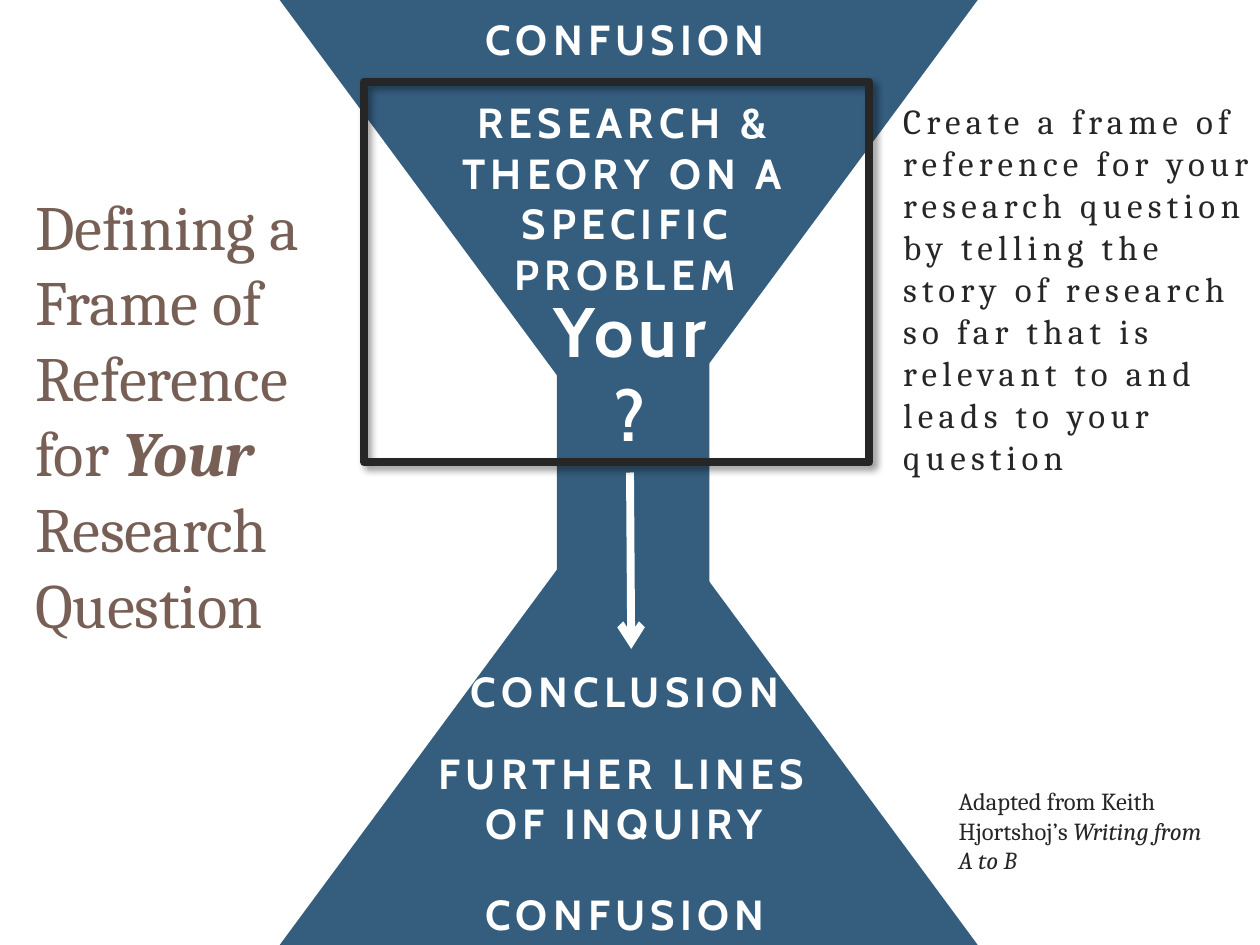
from lxml import etree
from pptx import Presentation
from pptx.dml.color import RGBColor
from pptx.enum.shapes import MSO_CONNECTOR, MSO_SHAPE
from pptx.enum.text import MSO_ANCHOR, PP_ALIGN
from pptx.oxml import parse_xml
from pptx.oxml.ns import qn
from pptx.util import Inches, Pt

BLUE, WHITE, DARK, BROWN = "355D7E", "FFFFFF", "262626", "775F55"
SHADOW = """<a:effectLst xmlns:a="http://schemas.openxmlformats.org/drawingml/2006/main">
  <a:outerShdw blurRad="50800" dist="38100" dir="2700000" algn="tl" rotWithShape="0">
    <a:srgbClr val="000000"><a:alpha val="40000"/></a:srgbClr>
  </a:outerShdw>
</a:effectLst>"""


def add_text(left, top, width, height, text):
    box = slide.shapes.add_textbox(Inches(left), Inches(top), Inches(width), Inches(height))
    box.text_frame.word_wrap = True
    box.text_frame.text = text
    return box.text_frame


def style_text(frame, size, font, color, bold=None, spacing=0, align=PP_ALIGN.LEFT):
    """Format every run; spacing is the letter spacing in points."""
    for paragraph in frame.paragraphs:
        paragraph.alignment = align
        for run in paragraph.runs:
            run.font.size = Pt(size)
            run.font.name = font
            run.font.color.rgb = RGBColor.from_string(color)
            if bold:
                run.font.bold = True
            if spacing:
                run.font._element.set("spc", str(spacing * 100))


prs = Presentation()
prs.slide_width, prs.slide_height = Inches(10), Inches(7.5)
slide = prs.slides.add_slide(prs.slide_layouts[6])

# Title
title = add_text(0.18, 1.34, 2.77, 3.89, "Defining a \vFrame of\vReference \vfor ")
title.vertical_anchor = MSO_ANCHOR.MIDDLE
your = title.paragraphs[0].add_run()
your.text = "Your "
your.font.bold = your.font.italic = True
title.paragraphs[0].add_line_break()
title.paragraphs[0].add_run().text = "Research Question"
style_text(title, 36, "Cambria", BROWN)

# Hourglass and its neck
for preset, left, top, width, height in [
    (MSO_SHAPE.FLOWCHART_COLLATE, 2.22, 0, 5.54, 7.5),
    (MSO_SHAPE.RECTANGLE, 4.42, 2.78, 1.21, 1.92),
]:
    part = slide.shapes.add_shape(preset, Inches(left), Inches(top), Inches(width), Inches(height))
    part.shadow.inherit = False
    part.fill.solid()
    part.fill.fore_color.rgb = RGBColor.from_string(BLUE)
    part.line.fill.background()

# Stages from top to bottom
for left, top, width, height, size, stage in [
    (2.89, 0.06, 4.14, 0.5, 24, "CONFUSION"),
    (2.89, 0.72, 4.14, 1.31, 24, "RESEARCH & THEORY ON A SPECIFIC\nPROBLEM"),
    (2.93, 2.23, 4.14, 1.45, 40, "Your\n?"),
    (2.89, 5.23, 4.14, 0.5, 24, "CONCLUSION"),
    (3.27, 5.88, 3.37, 0.91, 24, "FURTHER LINES OF INQUIRY"),
    (2.89, 7, 4.14, 0.5, 24, "CONFUSION"),
]:
    style_text(add_text(left, top, width, height, stage), size, "Cabin", WHITE,
               bold=True, spacing=3, align=PP_ALIGN.CENTER)

# Arrow from the question to the conclusion
arrow = slide.shapes.add_connector(
    MSO_CONNECTOR.STRAIGHT, Inches(5), Inches(3.75), Inches(5.01), Inches(5.15))
arrow.line.color.rgb = RGBColor.from_string(WHITE)
arrow.line.width = Pt(4.5)
etree.SubElement(arrow.line._get_or_add_ln(), qn("a:tailEnd"), type="arrow")
etree.SubElement(arrow._element.spPr, qn("a:effectLst"))

# Frame of reference
frame = slide.shapes.add_shape(
    MSO_SHAPE.RECTANGLE, Inches(2.89), Inches(0.65), Inches(4.01), Inches(3.02))
frame.fill.background()
frame.line.color.rgb = RGBColor.from_string(DARK)
frame.line.width = Pt(4.5)
frame._element.spPr.append(parse_xml(SHADOW))

# Credit and explanation
credit = add_text(7.51, 6.19, 2.29, 1.04, "Adapted from Keith\nHjortshoj’s \nA to B")
book_start = credit.paragraphs[1].add_run()
book_start.text = "Writing from"
for book_part in (book_start, credit.paragraphs[2].runs[0]):
    book_part.font.italic = True
style_text(credit, 14, "Cambria", DARK)

explanation = add_text(
    7.07, 0.74, 3.06, 3.47,
    "Create a frame of reference for your research question by telling the story "
    "of research so far that is relevant to and leads to your question")
style_text(explanation, 20, "Cambria", DARK, spacing=3)

prs.save("out.pptx")
